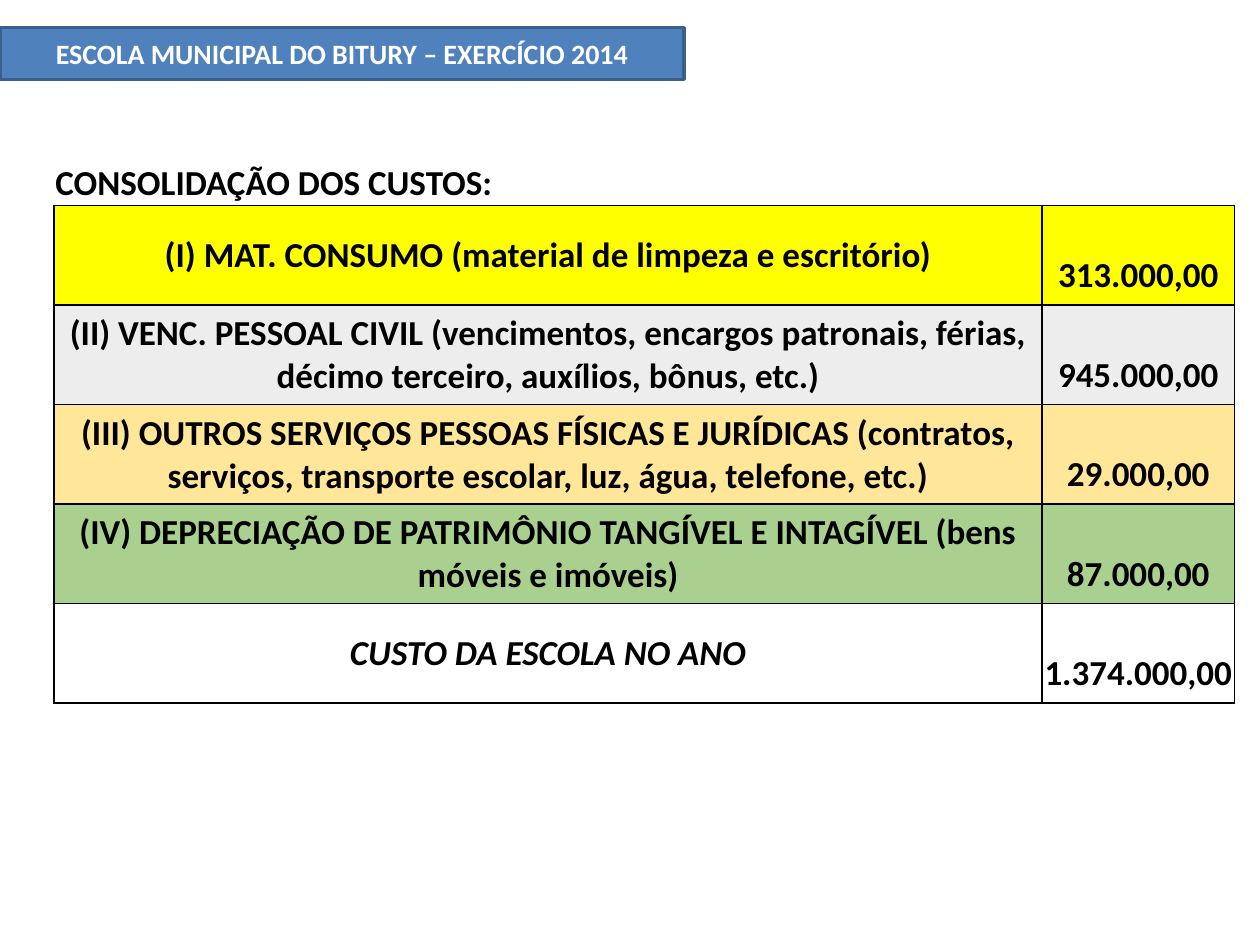
from dataclasses import dataclass
from typing import Optional

from lxml.etree import SubElement
from pptx import Presentation
from pptx.dml.color import RGBColor
from pptx.enum.text import MSO_ANCHOR as Anchor, MSO_AUTO_SIZE as AutoSize, PP_ALIGN as Align
from pptx.oxml.ns import qn
from pptx.util import Inches, Pt

COLORS = {
    "black": "000000",
    "white": "FFFFFF",
    "banner": "4F81BD",
    "banner_line": "3A5F8C",
    "supplies": "FFFF00",
    "payroll": "EDEDED",
    "services": "FFE699",
    "depreciation": "A9D08E",
}


@dataclass
class Cost:
    label: str
    value: str
    fill: Optional[str] = None
    italic: bool = False


COSTS = [
    Cost("(I) MAT. CONSUMO (material de limpeza e escritório)", "313.000,00", "supplies"),
    Cost("(II) VENC. PESSOAL CIVIL (vencimentos, encargos patronais, férias, "
         "décimo terceiro, auxílios, bônus, etc.)", "945.000,00", "payroll"),
    Cost("(III) OUTROS SERVIÇOS PESSOAS FÍSICAS E JURÍDICAS (contratos, serviços, "
         "transporte escolar, luz, água, telefone, etc.)", "29.000,00", "services"),
    Cost("(IV) DEPRECIAÇÃO DE PATRIMÔNIO TANGÍVEL E INTAGÍVEL (bens móveis e imóveis)",
         "87.000,00", "depreciation"),
    Cost("CUSTO DA ESCOLA NO ANO", "1.374.000,00", italic=True),
]
COL_WIDTHS = [4.14, 3.7, 1.53]
HEADER_HEIGHT, ROW_HEIGHT = 0.4, 0.79


def rgb(name: str) -> RGBColor:
    return RGBColor.from_string(COLORS[name])


def set_text(tf, text: str, *, size=20, color="black", italic=False, align=Align.CENTER) -> None:
    p = tf.paragraphs[0]
    p.alignment = align
    r = p.add_run()
    r.text = text
    r.font.name = "Calibri"
    r.font.size = Pt(size)
    r.font.bold = True
    r.font.italic = italic
    r.font.color.rgb = rgb(color)


def set_borders(cell, sides: str) -> None:
    """Rule the given sides (L, R, T, B) in black."""
    tc_pr = cell._tc.get_or_add_tcPr()
    for side in sides:
        ln = SubElement(tc_pr, qn(f"a:ln{side}"), w=str(Pt(1)))
        fill = SubElement(ln, qn("a:solidFill"))
        SubElement(fill, qn("a:srgbClr"), val=COLORS["black"])


def format_cell(cell, sides: str, anchor, fill: Optional[str] = None, bottom=0.0) -> None:
    cell.margin_left = cell.margin_right = cell.margin_top = Inches(0.01)
    cell.margin_bottom = Inches(bottom)
    cell.vertical_anchor = anchor
    set_borders(cell, sides)
    if fill:
        cell.fill.solid()
        cell.fill.fore_color.rgb = rgb(fill)
    else:
        cell.fill.background()


def add_banner(s, text: str) -> None:
    title = s.shapes.title
    title.left, title.top = Inches(0), Inches(0.22)
    title.width, title.height = Inches(5.43), Inches(0.41)
    title.fill.solid()
    title.fill.fore_color.rgb = rgb("banner")
    title.line.color.rgb = rgb("banner_line")
    title.line.width = Pt(2)
    tf = title.text_frame
    tf.auto_size = AutoSize.NONE
    tf.word_wrap = True
    tf.vertical_anchor = Anchor.MIDDLE
    set_text(tf, text, size=16, color="white")


def add_cost_table(s, heading: str, costs: list[Cost]) -> None:
    height = HEADER_HEIGHT + ROW_HEIGHT * len(costs)
    table = s.shapes.add_table(
        len(costs) + 1, len(COL_WIDTHS), Inches(0.43), Inches(1.23),
        Inches(sum(COL_WIDTHS)), Inches(height)).table
    table.first_row = table.horz_banding = False
    for col, width in zip(table.columns, COL_WIDTHS):
        col.width = Inches(width)
    for i, row in enumerate(table.rows):
        row.height = Inches(ROW_HEIGHT if i else HEADER_HEIGHT)

    for cell in table.rows[0].cells:
        format_cell(cell, "B", Anchor.BOTTOM)
    set_text(table.cell(0, 0).text_frame, heading, align=Align.LEFT)

    for i, cost in enumerate(costs, start=1):
        label, covered, value = table.rows[i].cells
        label.merge(covered)
        for cell in (label, covered):
            format_cell(cell, "LRTB", Anchor.MIDDLE, cost.fill)
        format_cell(value, "LRTB", Anchor.BOTTOM, cost.fill, bottom=0.06)
        set_text(label.text_frame, cost.label, italic=cost.italic)
        set_text(value.text_frame, cost.value)


def main() -> None:
    prs = Presentation()
    prs.slide_width, prs.slide_height = Inches(10), Inches(7.5)
    s = prs.slides.add_slide(prs.slide_layouts[5])
    add_banner(s, "ESCOLA MUNICIPAL DO BITURY – EXERCÍCIO 2014")
    add_cost_table(s, "CONSOLIDAÇÃO DOS CUSTOS:", COSTS)
    prs.save("out.pptx")


if __name__ == "__main__":
    main()
